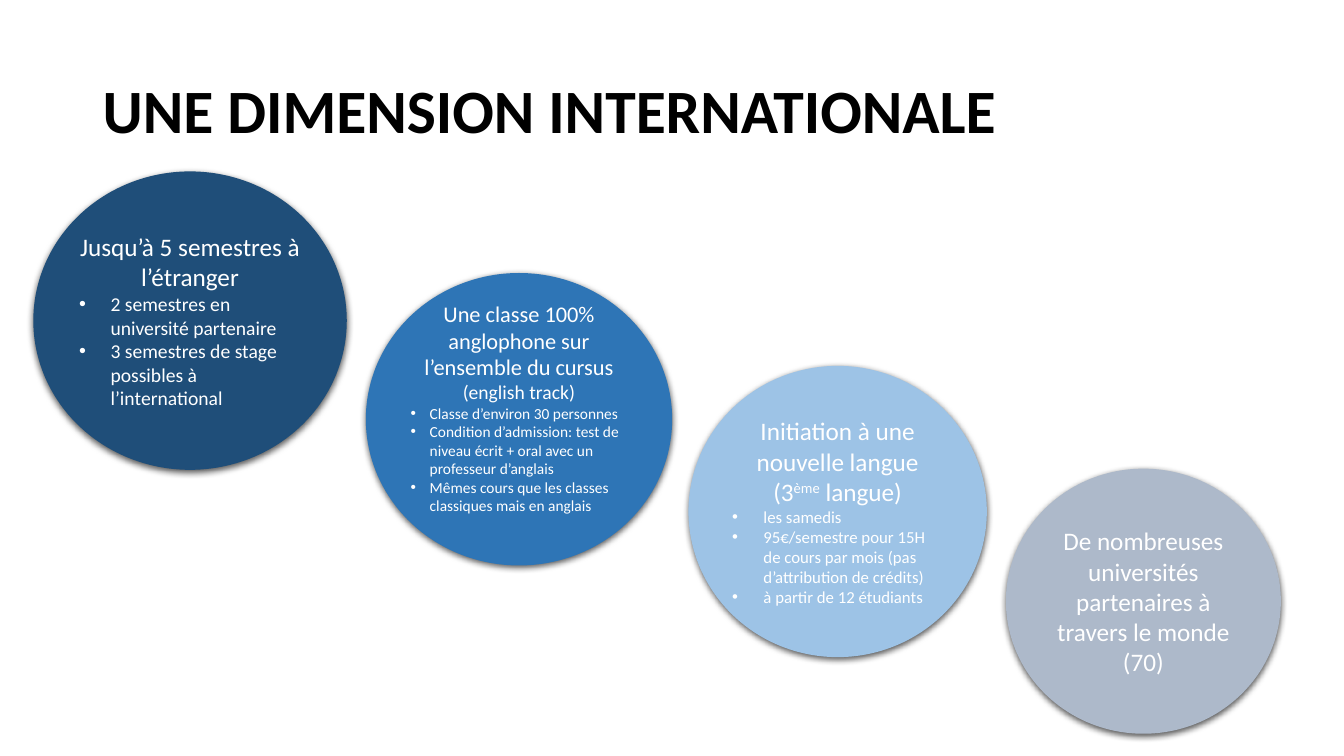
"""Builds the slide on the international dimension of the programme."""
from lxml import etree
from pptx import Presentation
from pptx.dml.color import RGBColor
from pptx.enum.shapes import MSO_SHAPE
from pptx.enum.text import MSO_ANCHOR, PP_ALIGN
from pptx.oxml.ns import qn
from pptx.util import Cm, Pt

OVAL = MSO_SHAPE.OVAL
MIDDLE = MSO_ANCHOR.MIDDLE
CENTER, LEFT = PP_ALIGN.CENTER, PP_ALIGN.LEFT
FONT = "Calibri"
COLORS = {
    "black": "000000",
    "white": "FFFFFF",
    "navy": "1F4E79",
    "blue": "2E75B6",
    "sky": "9DC3E6",
    "slate": "ADB9CA",
}
CIRCLES = [
    ("navy", (0.84, 4.32, 7.9, 7.52), 0, 0.79, [
        ("Jusqu’à 5 semestres à l’étranger", 18, False),
        ("2 semestres en université partenaire", 14, True),
        ("3 semestres de stage possibles à l’international", 14, True),
    ]),
    ("blue", (9.22, 6.88, 7.72, 7.37), 0.6, 0.48, [
        ("Une classe 100% anglophone sur l’ensemble du cursus", 16, False),
        ("(english track)", 14, False),
        ("Classe d’environ 30 personnes", 11, True),
        ("Condition d’admission: test de niveau écrit + oral avec un professeur d’anglais", 11, True),
        ("Mêmes cours que les classes classiques mais en anglais", 11, True),
    ]),
    ("slate", (25.35, 11.81, 6.93, 6.68), 0, 0, [
        ("De nombreuses universités partenaires à travers le monde", 18, False),
        ("(70)", 18, False),
    ]),
    ("sky", (17.35, 9.22, 7.52, 7.34), 0, 0.79, [
        ("Initiation à une nouvelle langue (3^ème^ langue)", 18, False),
        ("les samedis", 12, True),
        ("95€/semestre pour 15H de cours par mois (pas d’attribution de crédits)", 12, True),
        ("à partir de 12 étudiants", 12, True),
    ]),
]


class Painter:
    """Holds the style and the current page."""

    def __init__(self, page):
        """Keep the page to draw on."""
        self.page = page

    def style(self, span, size, color, bold=False):
        """Set the font of a span."""
        span.font.name = FONT
        span.font.size = Pt(size)
        span.font.bold = bold
        span.font.color.rgb = RGBColor.from_string(COLORS[color])

    def title(self, text, place):
        """Draw the heading."""
        box = self.page.shapes.add_textbox(*map(Cm, place))
        frame = box.text_frame
        frame.word_wrap = True
        frame.vertical_anchor = MIDDLE
        frame.text = text
        para = frame.paragraphs[0]
        para.line_spacing = 0.9
        self.style(para.runs[0], 44, "black", bold=True)

    def shadow(self, shape):
        """Give a shape a soft shadow straight below it."""
        shape.shadow.inherit = False
        effects = shape.element.spPr.find(qn("a:effectLst"))
        outer = etree.SubElement(effects, qn("a:outerShdw"), blurRad=str(Pt(4.5)),
                                 dist=str(Pt(1.5)), dir="5400000", algn="ctr", rotWithShape="0")
        shade = etree.SubElement(outer, qn("a:srgbClr"), val=COLORS["black"])
        etree.SubElement(shade, qn("a:alpha"), val="63000")

    def bullet(self, para, hang):
        """Put a hanging bullet on a paragraph."""
        properties = para._p.get_or_add_pPr()
        properties.set("marL", str(Cm(hang)))
        properties.set("indent", str(-Cm(hang)))
        etree.SubElement(properties, qn("a:buFont"), typeface="Arial")
        etree.SubElement(properties, qn("a:buChar"), char="•")

    def circle(self, color, place, bottom, hang, lines):
        """Draw a circle with its lines; carets enclose superscripts."""
        shape = self.page.shapes.add_shape(OVAL, *map(Cm, place))
        shape.fill.solid()
        shape.fill.fore_color.rgb = RGBColor.from_string(COLORS[color])
        shape.line.fill.background()
        self.shadow(shape)
        frame = shape.text_frame
        frame.word_wrap = True
        frame.vertical_anchor = MIDDLE
        frame.margin_left = frame.margin_top = frame.margin_right = 0
        frame.margin_bottom = Cm(bottom)
        for index, (text, size, bulleted) in enumerate(lines):
            para = frame.add_paragraph() if index else frame.paragraphs[0]
            para.alignment = LEFT if bulleted else CENTER
            if bulleted:
                self.bullet(para, hang)
            for position, part in enumerate(text.split("^")):
                span = para.add_run()
                span.text = part
                self.style(span, size, "white")
                if position % 2:
                    span._r.get_or_add_rPr().set("baseline", "30000")


def main():
    """Build and save the deck."""
    deck = Presentation()
    deck.slide_width, deck.slide_height = Cm(33.87), Cm(19.05)
    painter = Painter(deck.slides.add_slide(deck.slide_layouts[6]))
    painter.title("UNE DIMENSION INTERNATIONALE", (2.34, 1.02, 29.21, 3.68))
    for circle in CIRCLES:
        painter.circle(*circle)
    deck.save("out.pptx")


if __name__ == "__main__":
    main()
